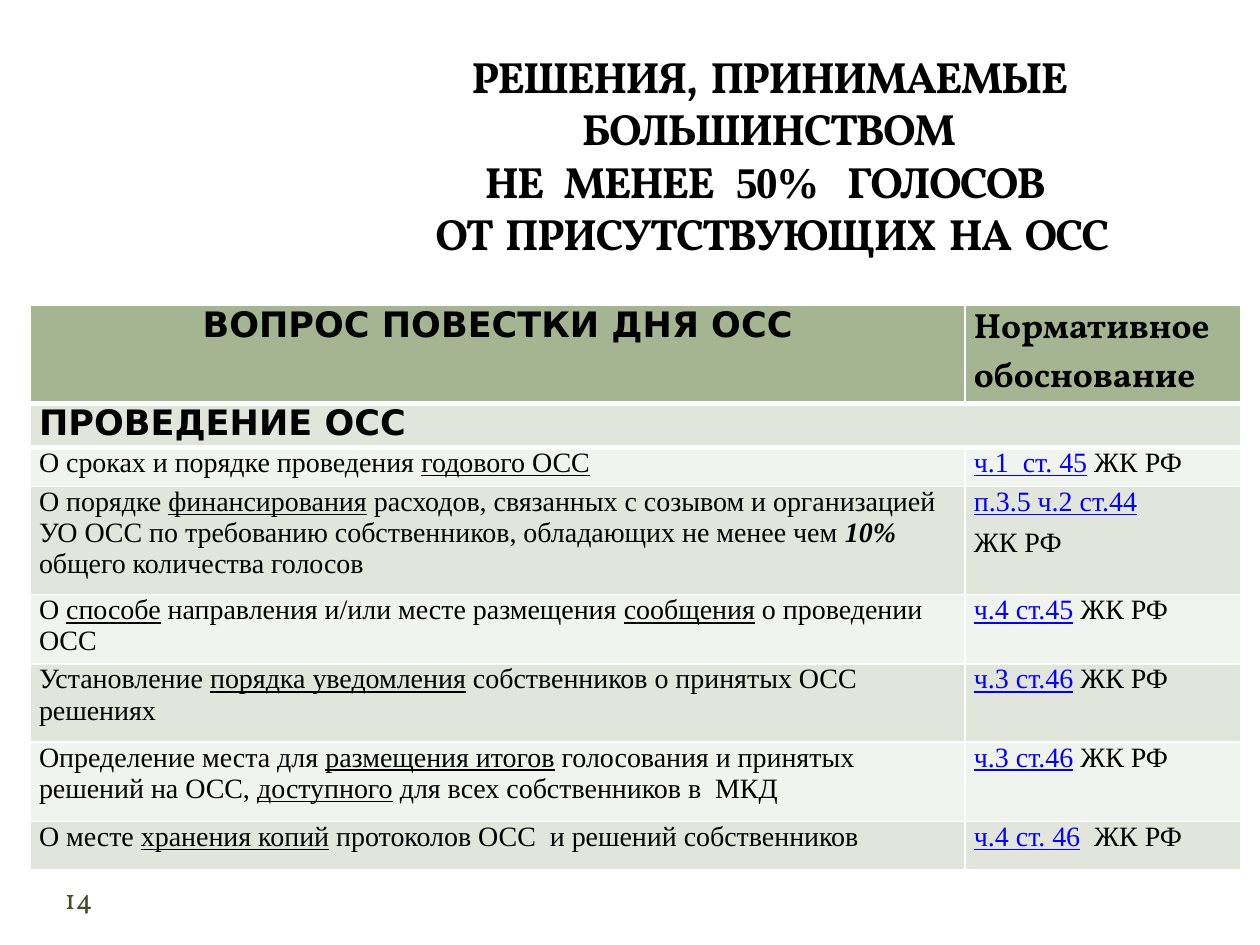
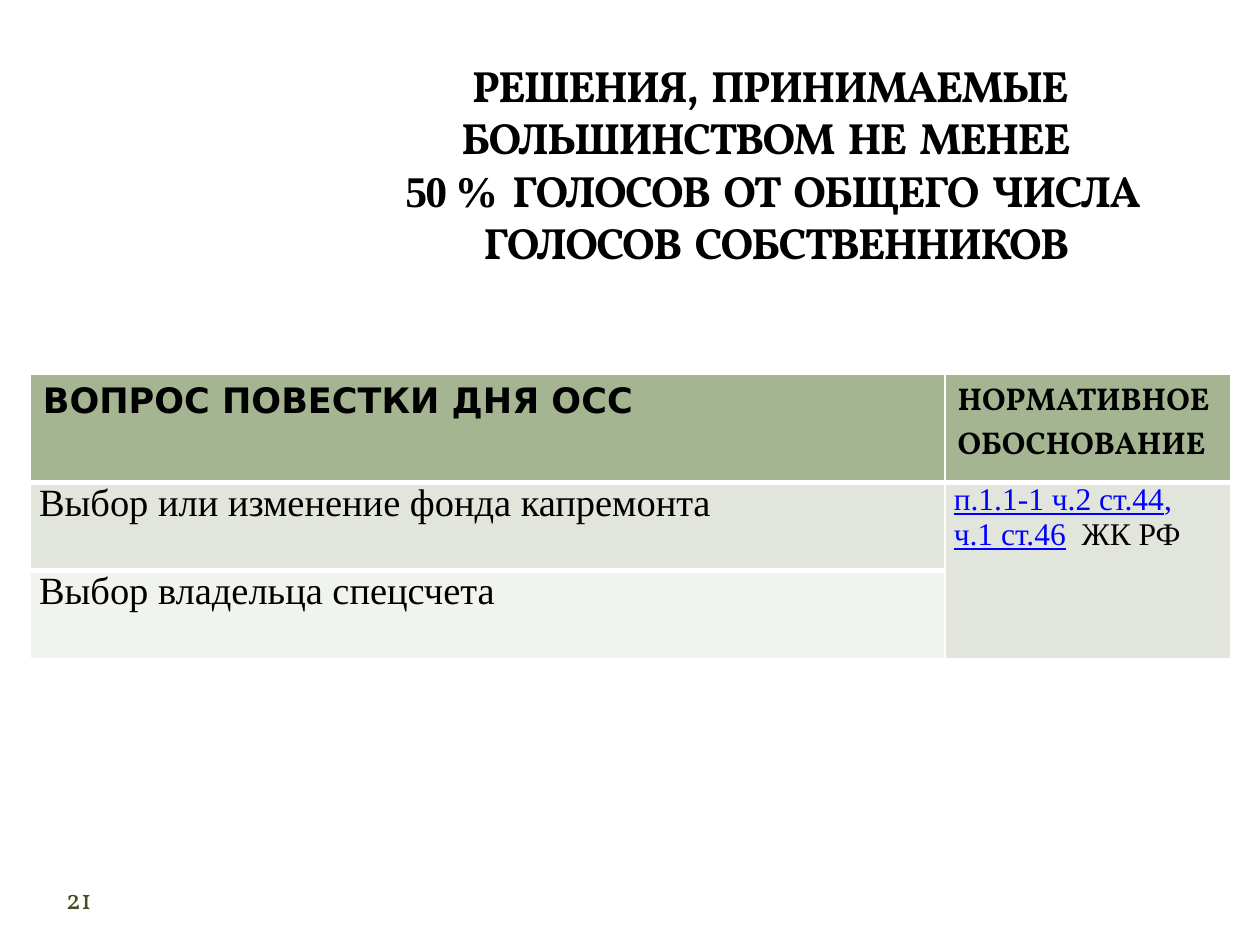
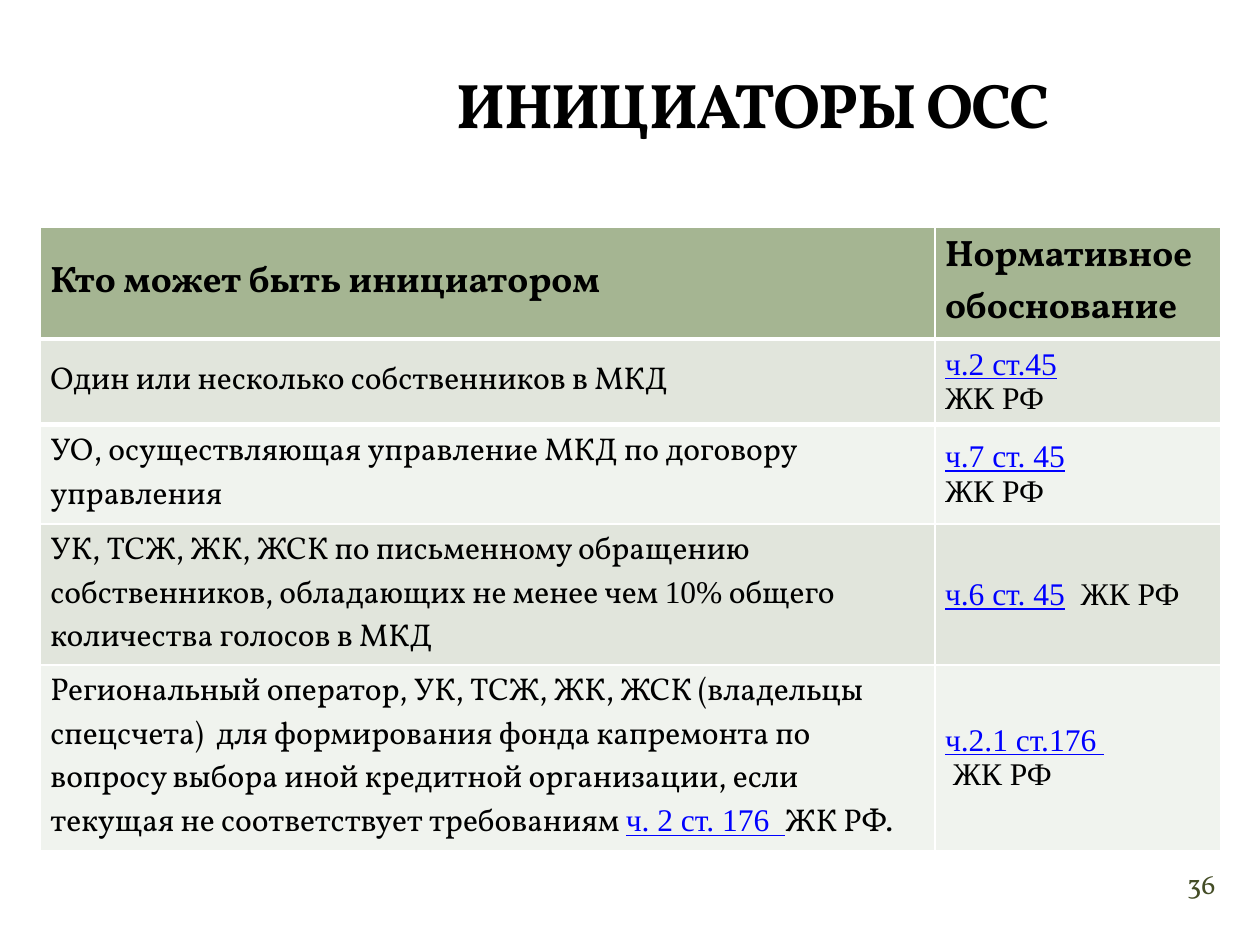
import pptx
import pptx.util
import pptx.dml.color
import pptx.enum.text
import pptx.oxml
import pptx.oxml.ns
from dataclasses import dataclass

In, Pt = pptx.util.Inches, pptx.util.Pt
ALIGN, ANCHOR = pptx.enum.text.PP_ALIGN, pptx.enum.text.MSO_ANCHOR


@dataclass(frozen=True)
class Theme:
    ink: str = "000000"
    link: str = "0000FF"
    number: str = "444D26"
    header: str = "A5B592"
    bands: tuple = ("E1E5DC", "F0F3EE")
    rule: str = "FFFFFF"
    header_rule: int = 3
    display: str = "Vollkorn"
    serif: str = "Times New Roman"
    sans: str = "DejaVu Sans"
    number_size: int = 16
    title_tracking: str = "-100"


T = Theme()


def link(text):
    return text, dict(color=T.link, underline=True, font=T.serif)


def under(text):
    return text, dict(underline=True)


def serif(text):
    return text, dict(font=T.serif)


def style(font, size, bold=False, align=ALIGN.LEFT, after=0):
    return dict(font=font, size=size, bold=bold, align=align, after=after)


# A cell is a list of paragraphs, a paragraph is a list of runs.
SLIDES = [
    dict(
        title=["РЕШЕНИЯ,  ПРИНИМАЕМЫЕ  БОЛЬШИНСТВОМ \nНЕ   МЕНЕЕ   ", serif("50%   "),
               "ГОЛОСОВ  \nОТ  ПРИСУТСТВУЮЩИХ  НА  ОСС"],
        title_size=25, title_box=(2.42, 0.17, 7.42, 1.94),
        number="14", number_box=(0.35, 6.93, 0.55, 0.4),
        left=0.24, top=2.42, cols=(7.42, 2.19),
        rows=(0.78, 0.35, 0.31, 0.86, 0.55, 0.62, 0.63, 0.38),
        header_styles=(style(T.sans, 20, True, ALIGN.CENTER, 6),
                       style(T.display, 20, True, ALIGN.JUSTIFY, 6)),
        body_styles=(style(T.serif, 16, after=6),) * 2,
        header_inset=(0.07, 0), body_inset=(0.07, 0), anchor=ANCHOR.TOP,
        merges=[(1, 0, 1, 1)],
        cells=[
            ([["ВОПРОС ПОВЕСТКИ ДНЯ ОСС"]], [["Нормативное обоснование"]]),
            ([[("ПРОВЕДЕНИЕ ОСС", dict(font=T.sans, size=20, bold=True))]], None),
            ([["О сроках и порядке проведения ", under("годового ОСС")]],
             [[link("ч.1  ст. 45"), " ЖК РФ"]]),
            ([["О порядке ", under("финансирования"),
               " расходов, связанных с созывом и организацией УО ОСС по требованию "
               "собственников, обладающих не менее чем ",
               ("10% ", dict(bold=True, italic=True)), "общего количества голосов"]],
             [[link("п.3.5 ч.2 ст.44")], ["ЖК РФ"]]),
            ([["О ", under("способе"), " направления и/или месте размещения ",
               under("сообщения"), " о проведении  ОСС"]],
             [[link("ч.4 ст.45"), " ЖК РФ"]]),
            ([["Установление ", under("порядка уведомления"),
               " собственников о принятых ОСС решениях"]],
             [[link("ч.3 ст.46"), " ЖК РФ"]]),
            ([["Определение места для ", under("размещения итогов"),
               " голосования и принятых решений на ОСС, ", under("доступного"),
               " для всех собственников в  МКД"]],
             [[link("ч.3 ст.46"), " ЖК РФ"]]),
            ([["О месте ", under("хранения копий"),
               " протоколов ОСС  и решений собственников"]],
             [[link("ч.4 ст. 46"), "  ЖК РФ"]]),
        ]),
    dict(
        title=["РЕШЕНИЯ,  ПРИНИМАЕМЫЕ  БОЛЬШИНСТВОМ  НЕ  МЕНЕЕ  \n", serif("50 %"),
               "  ГОЛОСОВ  ОТ  ОБЩЕГО  ЧИСЛА\n ГОЛОСОВ  СОБСТВЕННИКОВ"],
        title_size=25, title_box=(2.5, 0.39, 7.27, 1.79),
        number="21", number_box=(0.35, 6.93, 0.55, 0.4),
        left=0.24, top=2.97, cols=(7.26, 2.27), rows=(0.86, 0.7, 0.7),
        header_styles=(style(T.sans, 20, True), style(T.display, 18, True)),
        body_styles=(style(T.serif, 22, align=ALIGN.JUSTIFY, after=6), style(T.serif, 18)),
        header_inset=(0.1, 0.05), body_inset=(0.07, 0), anchor=ANCHOR.TOP,
        merges=[(1, 1, 2, 1)],
        cells=[
            ([["ВОПРОС ПОВЕСТКИ ДНЯ ОСС"]], [["НОРМАТИВНОЕ ОБОСНОВАНИЕ"]]),
            ([["Выбор или изменение фонда капремонта"]],
             [[link("п.1.1-1 ч.2 ст.44"), (",\n", dict(color=T.link)),
               link("ч.1 ст.46"), "  ЖК РФ"]]),
            ([["Выбор владельца спецсчета"]], None),
        ]),
    dict(
        title=["ИНИЦИАТОРЫ ОСС"],
        title_size=36, title_box=(2.42, 0, 7.12, 1.17),
        number="36", number_box=(9.2, 6.76, 0.67, 0.5),
        left=0.32, top=1.8, cols=(7.1, 2.27), rows=(0.89, 0.63, 0.79, 1.12, 1.47),
        header_styles=(style(T.display, 21, True),) * 2,
        body_styles=(style(T.display, 18), style(T.serif, 18)),
        header_inset=(0.08, 0.04), body_inset=(0.08, 0.04), anchor=ANCHOR.MIDDLE,
        merges=[],
        cells=[
            ([["Кто может быть инициатором"]], [["Нормативное обоснование"]]),
            ([["Один или несколько собственников в МКД"]],
             [[link("ч.2 ст.45")], ["ЖК РФ"]]),
            ([["УО, осуществляющая управление МКД по договору управления"]],
             [[link("ч.7 ст. 45")], ["ЖК РФ"]]),
            ([["УК, ТСЖ, ЖК, ЖСК по письменному обращению собственников, "
               "обладающих не менее чем ", serif("10%"),
               " общего количества голосов в МКД"]],
             [[link("ч.6 ст. 45"), "  ЖК РФ"]]),
            ([["Региональный оператор, УК, ТСЖ, ЖК, ЖСК (владельцы  спецсчета)  для "
               "формирования фонда капремонта по вопросу выбора иной кредитной "
               "организации, если текущая не соответствует требованиям ",
               link("ч. 2 ст. 176  "), "ЖК РФ."]],
             [[link("ч.2.1 ст.176 ")], [" ЖК РФ"]]),
        ]),
]


def rgb(color):
    return pptx.dml.color.RGBColor.from_string(color)


def add_run(p, text, look):
    for i, line in enumerate(text.split("\n")):
        if i:
            p.add_line_break()
        if not line:
            continue
        r = p.add_run()
        r.text = line
        f = r.font
        f.name, f.size, f.bold = look["font"], Pt(look["size"]), look["bold"]
        f.italic, f.underline = look.get("italic", False), look.get("underline", False)
        f.color.rgb = rgb(look.get("color", T.ink))
        if "tracking" in look:
            r._r.get_or_add_rPr().set("spc", look["tracking"])


def write(tf, paragraphs, base):
    """Fill a text frame; each run may override parts of the base style."""
    for i, runs in enumerate(paragraphs):
        p = tf.add_paragraph() if i else tf.paragraphs[0]
        p.alignment, p.space_after = base["align"], Pt(base["after"])
        for run in runs:
            text, extra = (run, {}) if isinstance(run, str) else run
            add_run(p, text, {**base, **extra})


def set_insets(target, x, y):
    target.margin_left = target.margin_right = In(x)
    target.margin_top = target.margin_bottom = In(y)


def add_text(s, box, runs, base, anchor, insets):
    tf = s.shapes.add_textbox(*map(In, box)).text_frame
    tf.word_wrap, tf.vertical_anchor = True, anchor
    set_insets(tf, *insets)
    write(tf, [runs], base)


def set_border(cell, side):
    """Draw the thick rule between header and body; side is lnT or lnB."""
    border = pptx.oxml.parse_xml(
        f'<a:{side} {pptx.oxml.ns.nsdecls("a")} w="{Pt(T.header_rule)}"><a:solidFill>'
        f'<a:srgbClr val="{T.rule}"/></a:solidFill></a:{side}>')
    cell._tc.get_or_add_tcPr().insert(0, border)


def add_grid(s, d):
    cols, rows = d["cols"], d["rows"]
    table = s.shapes.add_table(len(rows), len(cols), In(d["left"]), In(d["top"]),
                               In(sum(cols)), In(sum(rows))).table
    for column, width in zip(table.columns, cols):
        column.width = In(width)
    for row, height in zip(table.rows, rows):
        row.height = In(height)
    for r1, c1, r2, c2 in d["merges"]:
        table.cell(r1, c1).merge(table.cell(r2, c2))
    for i, row in enumerate(d["cells"]):
        part = "body" if i else "header"
        for j, content in enumerate(row):
            cell = table.cell(i, j)
            cell.fill.solid()
            cell.fill.fore_color.rgb = rgb(T.bands[(i - 1) % 2] if i else T.header)
            cell.vertical_anchor = d["anchor"]
            set_insets(cell, *d[part + "_inset"])
            if i < 2:
                set_border(cell, "lnT" if i else "lnB")
            if content:
                write(cell.text_frame, content, d[part + "_styles"][j])


def main():
    prs = pptx.Presentation()
    prs.slide_width, prs.slide_height = In(10), In(7.5)
    for d in SLIDES:
        s = prs.slides.add_slide(prs.slide_layouts[6])
        title = dict(style(T.display, d["title_size"], True, ALIGN.CENTER),
                     tracking=T.title_tracking)
        add_text(s, d["title_box"], d["title"], title, ANCHOR.BOTTOM, (0.1, 0.05))
        add_grid(s, d)
        number = dict(style(T.display, T.number_size, align=ALIGN.CENTER), color=T.number)
        add_text(s, d["number_box"], [d["number"]], number, ANCHOR.MIDDLE, (0, 0))
    prs.save("out.pptx")


if __name__ == "__main__":
    main()
